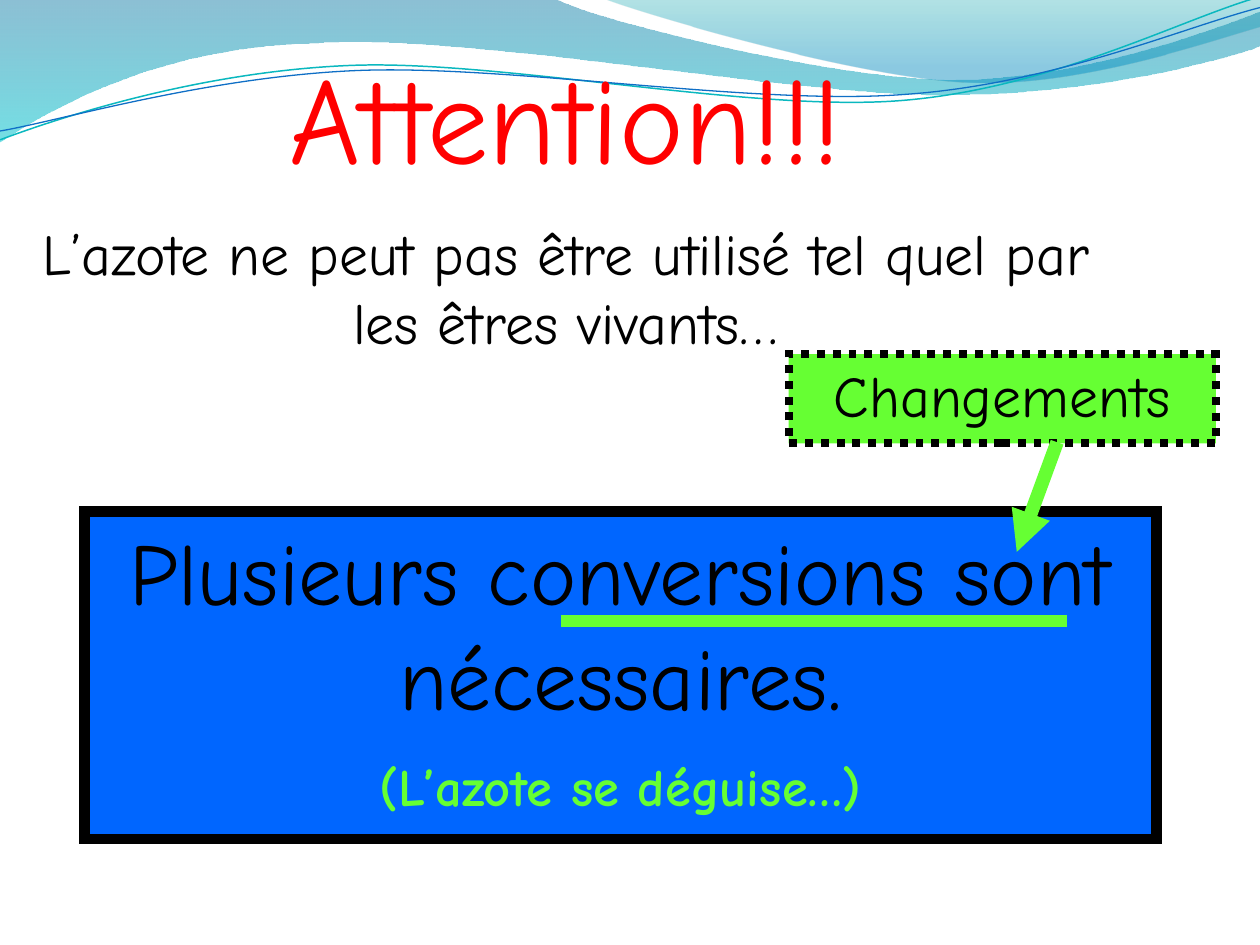
from dataclasses import dataclass
from math import cos, radians, sin
from typing import NamedTuple

from lxml.etree import SubElement
from pptx import Presentation
from pptx.dml.color import RGBColor
from pptx.enum.dml import MSO_LINE
from pptx.enum.shapes import MSO_CONNECTOR, MSO_SHAPE
from pptx.enum.text import MSO_ANCHOR, MSO_AUTO_SIZE, PP_ALIGN
from pptx.oxml.ns import qn
from pptx.util import Inches, Pt

COLUMNS, ROWS = 100, 75
CELL = Inches(10) // COLUMNS


@dataclass(frozen=True)
class Theme:
    font: str = "Comic Neue"
    alert: str = "FF0000"
    ink: str = "000000"
    panel: str = "0066FF"
    accent: str = "66FF33"
    title_size: int = 70
    panel_size: int = 50
    body_size: int = 33
    aside_size: int = 30


THEME = Theme()


class Box(NamedTuple):
    """Left, top, width and height in grid cells."""
    left: float
    top: float
    width: float
    height: float

    def lengths(self) -> list[int]:
        return [round(side * CELL) for side in self]


class Line(NamedTuple):
    text: str
    size: int
    color: str
    bold: bool = False


class Stop(NamedTuple):
    position: float
    color: str
    opacity: int


class Wave(NamedTuple):
    """Path pieces in grid cells: two numbers are a corner, six are a curve."""
    start: tuple
    pieces: list
    stops: tuple = ()
    color: str = ""
    weight: float = 0
    tilt: float = 0


class Panel(NamedTuple):
    box: Box
    fill: str
    border: float
    dash: MSO_LINE
    lines: list


class Stroke(NamedTuple):
    start: tuple
    end: tuple
    weight: float
    arrow: bool = False


TILT = -2.7
TILT_CENTRE = (49.9, 5.8)

WAVES = [
    Wave((0, 0), [
        (44, -0.1), (47.6, 1.7, 66.4, 6.3, 75.8, 6.3), (85.3, 6.3, 95.8, 2.6, 100, 0.9),
        (100.1, 3.6), (98.3, 4.4, 87, 7.6, 74.6, 7.5), (62.2, 7.5, 38.2, 2.8, 25.7, 3.4),
        (12.9, 3.6, 4.6, 8.3, -0.1, 11.3), (0, 0)],
        stops=(Stop(0, "0074A1", 45), Stop(1, "00C6CF", 55))),
    Wave((47.9, -0.1), [
        (50.9, 1.1, 68.2, 6.2, 76.9, 6.5), (85.6, 6.9, 96.1, 3.2, 100, 2.1), (100, 0),
        (47.9, -0.1)],
        stops=(Stop(0, "00A1A9", 30), Stop(0.8, "008BBF", 45))),
    Wave((0, 11.1), [
        (4.8, 9.3, 15.8, 5.7, 27.7, 5.2), (39.5, 4.7, 59.3, 8.9, 71.3, 8),
        (83.3, 7.1, 93.8, 1.5, 99.8, -0.2)], color="0AB8BF", weight=0.85, tilt=TILT),
    Wave((0, 10.4), [
        (4.7, 9.6, 16.4, 6.1, 28.3, 5.6), (40.3, 5.1, 59.7, 8.4, 71.7, 7.5),
        (83.6, 6.7, 94.1, 2.1, 100, 0.6)], color="0F6FC6", weight=0.75, tilt=TILT),
]

HEADING_BOX = Box(2, 2.8, 85.8, 26.4)
HEADING = [
    Line("Attention!!!", THEME.title_size, THEME.alert),
    Line("L’azote ne peut pas être utilisé tel quel par les êtres vivants…",
         THEME.body_size, THEME.ink),
]

PANELS = [
    Panel(Box(6.7, 40.6, 85.1, 26), THEME.panel, 6, MSO_LINE.SOLID, [
        Line("Plusieurs conversions sont nécessaires.", THEME.panel_size, THEME.ink),
        Line("(L’azote se déguise…)", THEME.aside_size, THEME.accent, True)]),
    Panel(Box(62.6, 28.1, 33.9, 7.1), THEME.accent, 4.5, MSO_LINE.ROUND_DOT, [
        Line("Changements", THEME.body_size, THEME.ink)]),
]

STROKES = [
    Stroke((83.9, 35.1), (80.7, 43.8), 7.75, arrow=True),
    Stroke((44.5, 49.3), (84.7, 49.3), 7),
]


def rgb(color: str) -> RGBColor:
    return RGBColor.from_string(color)


def level(numbers: tuple, tilt: float) -> list[tuple]:
    """Pair numbers into slide points, with the wave's tilt taken out."""
    across, down = TILT_CENTRE
    c, s = cos(radians(-tilt)), sin(radians(-tilt))
    return [(round((across + (x - across) * c - (y - down) * s) * CELL),
             round((down + (x - across) * s + (y - down) * c) * CELL))
            for x, y in zip(numbers[::2], numbers[1::2])]


def draw_wave(slide, wave: Wave) -> None:
    start = level(wave.start, wave.tilt)[0]
    pieces = [level(piece, wave.tilt) for piece in wave.pieces]
    builder = slide.shapes.build_freeform(*start, scale=1.0)
    builder.add_line_segments([piece[-1] for piece in pieces], close=bool(wave.stops))
    ribbon = builder.convert_to_shape()
    segments = list(ribbon.element.spPr.iter(qn("a:lnTo")))
    for segment, piece in zip(segments, pieces):
        if len(piece) == 3:
            curve = segment.makeelement(qn("a:cubicBezTo"))
            for x, y in piece:
                SubElement(curve, qn("a:pt"), x=str(x - ribbon.left), y=str(y - ribbon.top))
            segment.getparent().replace(segment, curve)
    ribbon.rotation = wave.tilt
    ribbon.shadow.inherit = False
    if not wave.stops:
        ribbon.fill.background()
        ribbon.line.color.rgb = rgb(wave.color)
        ribbon.line.width = Pt(wave.weight)
        return
    ribbon.line.fill.background()
    ribbon.fill.gradient()
    ribbon.fill.gradient_angle = 270
    for target, stop in zip(ribbon.fill.gradient_stops, wave.stops):
        target.position = stop.position
        target.color.rgb = rgb(stop.color)
    for tint, stop in zip(ribbon.element.spPr.iter(qn("a:srgbClr")), wave.stops):
        SubElement(tint, qn("a:alpha"), val=str(stop.opacity * 1000))


def write(shape, lines: list[Line]) -> None:
    frame = shape.text_frame
    frame_format = {"word_wrap": True, "auto_size": MSO_AUTO_SIZE.SHAPE_TO_FIT_TEXT,
                    "vertical_anchor": MSO_ANCHOR.TOP}
    for name, value in frame_format.items():
        setattr(frame, name, value)
    for index, line in enumerate(lines):
        paragraph = frame.add_paragraph() if index else frame.paragraphs[0]
        paragraph.alignment = PP_ALIGN.CENTER
        paragraph.space_before = Pt(line.size / 2 if index else 0)
        run = paragraph.add_run()
        run.text = line.text
        run_format = {"name": THEME.font, "size": Pt(line.size), "bold": line.bold}
        for name, value in run_format.items():
            setattr(run.font, name, value)
        run.font.color.rgb = rgb(line.color)


def draw_panel(slide, panel: Panel) -> None:
    block = slide.shapes.add_shape(MSO_SHAPE.RECTANGLE, *panel.box.lengths())
    block.shadow.inherit = False
    block.fill.solid()
    block.fill.fore_color.rgb = rgb(panel.fill)
    block.line.color.rgb = rgb(THEME.ink)
    block.line.width = Pt(panel.border)
    block.line.dash_style = panel.dash
    SubElement(block.element.spPr.find(qn("a:ln")), qn("a:miter"), lim="800000")
    write(block, panel.lines)


def draw_stroke(slide, stroke: Stroke) -> None:
    ends = [round(cell * CELL) for cell in stroke.start + stroke.end]
    connector = slide.shapes.add_connector(MSO_CONNECTOR.STRAIGHT, *ends)
    connector.line.color.rgb = rgb(THEME.accent)
    connector.line.width = Pt(stroke.weight)
    if stroke.arrow:
        SubElement(connector.element.spPr.find(qn("a:ln")), qn("a:tailEnd"), type="triangle")
    SubElement(connector.element.spPr, qn("a:effectLst"))


def main() -> None:
    deck = Presentation()
    deck.slide_width, deck.slide_height = COLUMNS * CELL, ROWS * CELL
    slide = deck.slides.add_slide(deck.slide_layouts[5])
    for wave in WAVES:
        draw_wave(slide, wave)
    heading = slide.shapes.title
    heading.left, heading.top, heading.width, heading.height = HEADING_BOX.lengths()
    heading.element.getparent().append(heading.element)  # in front of the waves
    write(heading, HEADING)
    for panel in PANELS:
        draw_panel(slide, panel)
    for stroke in STROKES:
        draw_stroke(slide, stroke)
    deck.save("out.pptx")


if __name__ == "__main__":
    main()
